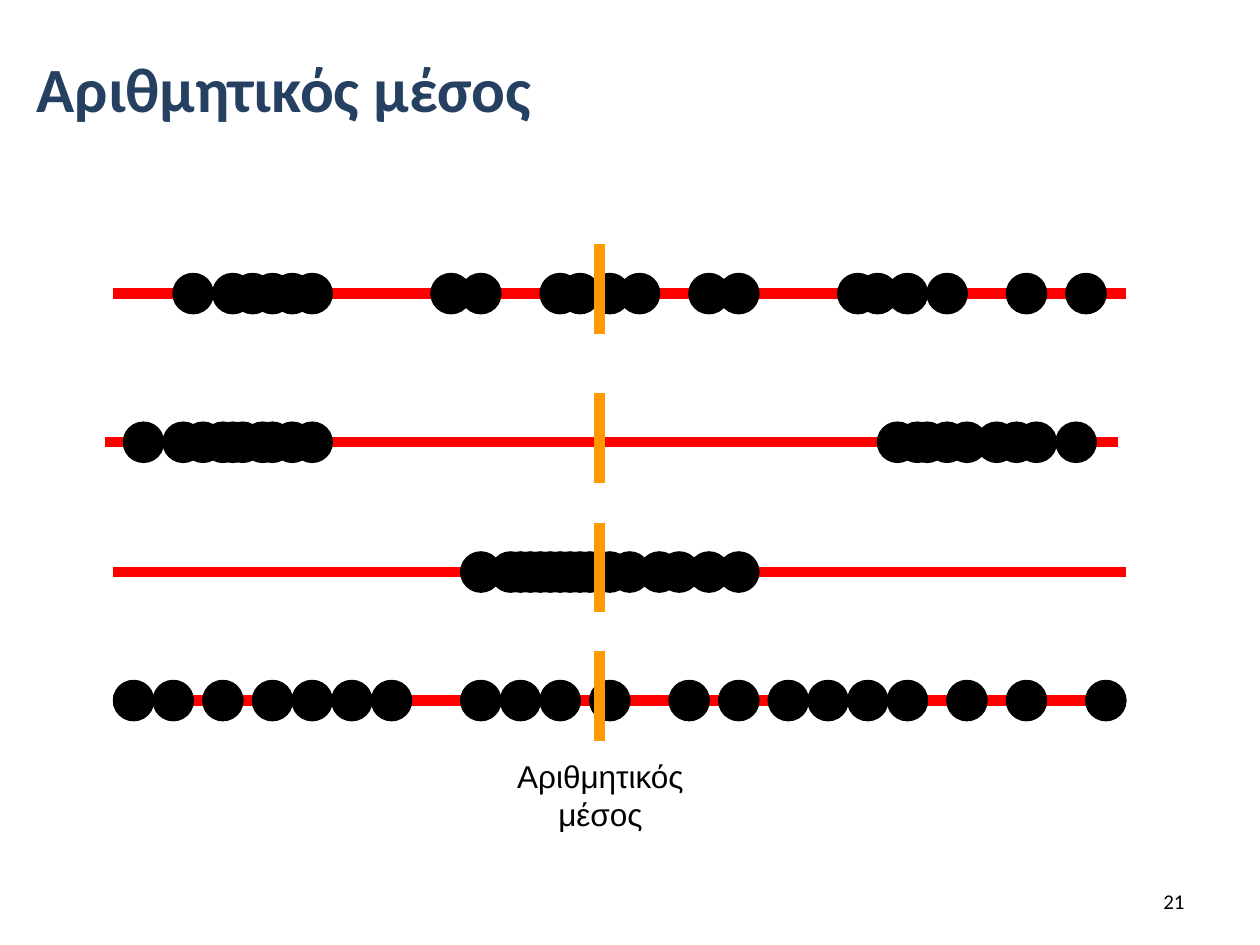
from dataclasses import dataclass

from lxml.etree import SubElement
from pptx import Presentation
from pptx.dml.color import RGBColor
from pptx.enum.shapes import MSO_CONNECTOR, MSO_SHAPE
from pptx.enum.text import MSO_ANCHOR, PP_ALIGN
from pptx.oxml.ns import qn
from pptx.util import Inches, Pt


@dataclass(frozen=True)
class Theme:
    title_color: str = "254061"
    ink: str = "000000"
    axis: str = "FF0000"
    mean: str = "FF9900"
    title_size: int = 36
    label_size: int = 18
    number_size: int = 12
    line_width: float = 6
    outline_width: float = 0.75
    heading_font: str = "Calibri"
    label_font: str = "Arial"


THEME = Theme()
GRID_LEFT = 0.9
GRID_STEP = 1 / 12.7
DOT_SIZE = 0.32
AXIS_LENGTH = 8.04
MEAN_X = 4.76
MEAN_ABOVE, MEAN_BELOW = 0.39, 0.32

DISTRIBUTIONS = [
    (0.9, 2.33, [6, 10, 12, 14, 16, 18, 32, 35, 43, 45, 48, 51, 58, 61,
                 73, 75, 78, 82, 90, 96]),
    (0.83, 3.51, [1, 5, 7, 9, 10, 11, 13, 14, 16, 18,
                  77, 79, 80, 82, 84, 87, 89, 91, 95]),
    (0.9, 4.54, [35, *range(38, 47), 48, 50, 53, 55, 58, 61]),
    (0.9, 5.56, [0, 4, 9, 14, 18, 22, 26, 35, 39, 43, 48, 56, 61, 66,
                 70, 74, 78, 84, 90, 98]),
]


def write_text(shape, text, *, size, font, color=THEME.ink, bold=False,
               align=PP_ALIGN.LEFT, anchor=MSO_ANCHOR.TOP, margin=0):
    frame = shape.text_frame
    frame.word_wrap = True
    frame.vertical_anchor = anchor
    paragraph = frame.paragraphs[0]
    paragraph.alignment = align
    if margin:
        properties = paragraph._p.get_or_add_pPr()
        properties.set("marL", str(Inches(margin)))
        properties.set("indent", "0")
    run = paragraph.add_run()
    run.text = text
    run.font.size = Pt(size)
    run.font.name = font
    run.font.bold = bold
    run.font.color.rgb = RGBColor.from_string(color)


def add_title(slide, text):
    title = slide.shapes.title
    title.left, title.top = Inches(0), Inches(0)
    title.width, title.height = Inches(10), Inches(1.39)
    write_text(title, text, size=THEME.title_size, font=THEME.heading_font,
               color=THEME.title_color, bold=True, anchor=MSO_ANCHOR.MIDDLE,
               margin=0.19)


def add_label(slide, text, left, top, width, height, **text_format):
    box = slide.shapes.add_textbox(
        Inches(left), Inches(top), Inches(width), Inches(height))
    write_text(box, text, **text_format)


def add_line(slide, start_x, start_y, end_x, end_y, color):
    line = slide.shapes.add_connector(
        MSO_CONNECTOR.STRAIGHT, Inches(start_x), Inches(start_y),
        Inches(end_x), Inches(end_y))
    line.line.color.rgb = RGBColor.from_string(color)
    line.line.width = Pt(THEME.line_width)
    SubElement(line._element.spPr, qn("a:effectLst"))


def add_dot(slide, left, center_y):
    dot = slide.shapes.add_shape(
        MSO_SHAPE.OVAL, Inches(left), Inches(center_y - DOT_SIZE / 2),
        Inches(DOT_SIZE), Inches(DOT_SIZE))
    dot.shadow.inherit = False
    dot.fill.solid()
    dot.fill.fore_color.rgb = RGBColor.from_string(THEME.ink)
    dot.line.color.rgb = RGBColor.from_string(THEME.ink)
    dot.line.width = Pt(THEME.outline_width)


def add_distribution(slide, left, center_y, values):
    add_line(slide, left, center_y, left + AXIS_LENGTH, center_y, THEME.axis)
    for value in values:
        add_dot(slide, GRID_LEFT + value * GRID_STEP, center_y)
    add_line(slide, MEAN_X, center_y - MEAN_ABOVE,
             MEAN_X, center_y + MEAN_BELOW, THEME.mean)


def main():
    presentation = Presentation()
    presentation.slide_width = Inches(10)
    presentation.slide_height = Inches(7.5)
    slide = presentation.slides.add_slide(presentation.slide_layouts[5])

    add_title(slide, "Αριθμητικός μέσος")
    for left, center_y, values in DISTRIBUTIONS:
        add_distribution(slide, left, center_y, values)
    add_label(slide, "Αριθμητικός μέσος", 3.74, 5.96, 2.05, 0.7,
              size=THEME.label_size, font=THEME.label_font,
              align=PP_ALIGN.CENTER)
    add_label(slide, "21", 7.17, 6.95, 2.33, 0.4,
              size=THEME.number_size, font=THEME.heading_font,
              align=PP_ALIGN.RIGHT, anchor=MSO_ANCHOR.MIDDLE)
    presentation.save("out.pptx")


if __name__ == "__main__":
    main()
